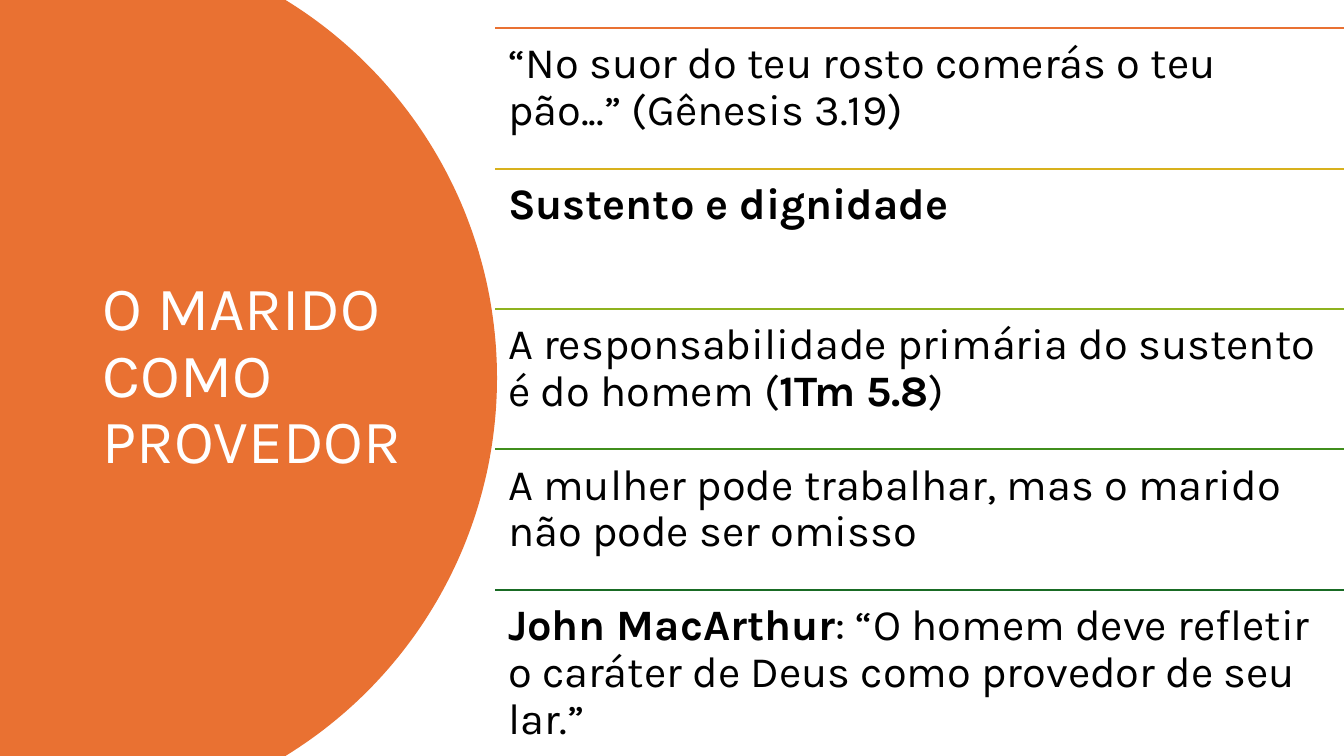
from math import asin, cos, sin

from pptx import Presentation
from pptx.dml.color import RGBColor
from pptx.enum.shapes import MSO_CONNECTOR
from pptx.enum.text import MSO_ANCHOR, MSO_AUTO_SIZE, PP_ALIGN
from pptx.oxml.ns import qn
from pptx.util import Inches, Pt
from lxml.etree import SubElement

FONT = "Karla"
ORANGE = RGBColor(0xE9, 0x71, 0x32)
GOLD = RGBColor(0xD8, 0xB1, 0x1D)
LIME = RGBColor(0x8E, 0xB2, 0x1E)
GREEN = RGBColor(0x40, 0x8E, 0x1C)
FOREST = RGBColor(0x19, 0x6B, 0x24)
BLACK = RGBColor(0, 0, 0)
WHITE = RGBColor(0xFF, 0xFF, 0xFF)

PAGE_WIDTH, PAGE_HEIGHT = 13.33, 7.5
DISC_RIGHT, DISC_RADIUS = 4.93, 4.4
ROW_LEFT, ROW_TOP, ROW_HEIGHT = 4.91, 0.28, 1.393
ROW_WIDTH = PAGE_WIDTH - ROW_LEFT

# Each row: line colour, then (text, bold) spans
ROWS = [
    (ORANGE, [("“No suor do teu rosto comerás o teu pão...” (Gênesis 3.19)", False)]),
    (GOLD, [("Sustento e dignidade", True)]),
    (LIME, [("A responsabilidade primária do sustento é do homem (", False),
            ("1Tm 5.8", True), (")", False)]),
    (GREEN, [("A mulher pode trabalhar, mas o marido não pode ser omisso", False)]),
    (FOREST, [("John MacArthur", True),
              (": “O homem deve refletir o caráter de Deus como provedor de seu lar.”", False)]),
]


def add_disc(page, steps=120):
    """Fill the left side up to a circular arc that bulges to the right."""
    middle = PAGE_HEIGHT / 2
    reach = asin(middle / DISC_RADIUS)
    centre = DISC_RIGHT - DISC_RADIUS
    angles = [reach * (2 * step / steps - 1) for step in range(steps + 1)]
    arc = [(Inches(centre + DISC_RADIUS * cos(angle)),
            Inches(middle + DISC_RADIUS * sin(angle))) for angle in angles]
    builder = page.shapes.build_freeform(0, 0)
    builder.add_line_segments(arc + [(0, Inches(PAGE_HEIGHT))], close=True)
    disc = builder.convert_to_shape()
    disc.shadow.inherit = False
    disc.fill.solid()
    disc.fill.fore_color.rgb = ORANGE
    disc.line.fill.background()


def add_span(para, text, *, size, color, bold=False):
    span = para.add_run()
    span.text = text
    span.font.name = FONT
    span.font.size = Pt(size)
    span.font.bold = bold
    span.font.color.rgb = color


def place_title(page, text):
    title = page.shapes.title
    title.left, title.top = Inches(0.92), Inches(0.7)
    title.width, title.height = Inches(3.23), Inches(6.09)
    frame = title.text_frame
    frame.word_wrap = True
    frame.auto_size = MSO_AUTO_SIZE.NONE
    frame.vertical_anchor = MSO_ANCHOR.MIDDLE
    para = frame.paragraphs[0]
    para.alignment = PP_ALIGN.LEFT
    para.line_spacing = 0.9
    add_span(para, text, size=44, color=WHITE)


def add_rule(page, top, color):
    rule = page.shapes.add_connector(
        MSO_CONNECTOR.STRAIGHT, Inches(ROW_LEFT), Inches(top),
        Inches(PAGE_WIDTH), Inches(top))
    rule.line.color.rgb = color
    rule.line.width = Pt(1.5)
    SubElement(rule._element.spPr, qn("a:effectLst"))


def add_row_text(page, top, spans):
    box = page.shapes.add_textbox(Inches(ROW_LEFT), Inches(top),
                                  Inches(ROW_WIDTH), Inches(ROW_HEIGHT))
    frame = box.text_frame
    frame.word_wrap = True
    frame.margin_left = frame.margin_right = Inches(0.13)
    frame.margin_top = frame.margin_bottom = Inches(0.13)
    para = frame.paragraphs[0]
    para.line_spacing = 0.9
    for text, bold in spans:
        add_span(para, text, size=31, color=BLACK, bold=bold)


def main():
    deck = Presentation()
    deck.slide_width, deck.slide_height = Inches(PAGE_WIDTH), Inches(PAGE_HEIGHT)
    page = deck.slides.add_slide(deck.slide_layouts[5])
    add_disc(page)
    place_title(page, "O MARIDO COMO PROVEDOR")
    # Bring the title in front of the disc
    page.shapes._spTree.append(page.shapes.title._element)
    for index, (color, spans) in enumerate(ROWS):
        top = ROW_TOP + index * ROW_HEIGHT
        add_rule(page, top, color)
        add_row_text(page, top, spans)
    deck.save("out.pptx")


if __name__ == "__main__":
    main()
